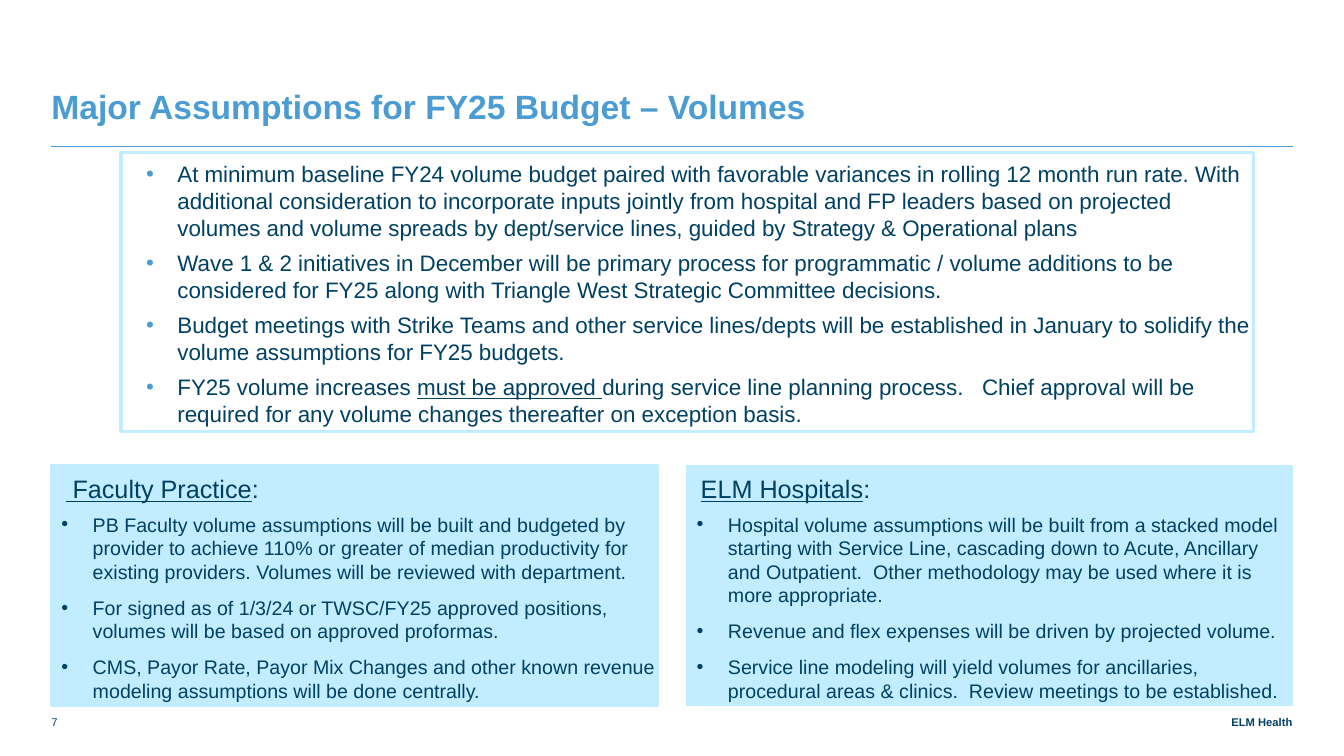
import pptx
import pptx.util
import pptx.dml.color
import pptx.enum.text
import pptx.enum.shapes
from lxml import etree

Inch, Pt = pptx.util.Inches, pptx.util.Pt
ALIGN, ANCHOR = pptx.enum.text.PP_ALIGN, pptx.enum.text.MSO_ANCHOR
NS = "http://schemas.openxmlformats.org/drawingml/2006/main"
COLORS = {"title": "4B9CD3", "text": "004163", "panel": "C2ECFF"}

# Grid: two columns inside equal margins
WIDE, HIGH = 13.33, 7.5
LEFT, GAP = 0.51, 0.29
SPAN = WIDE - 2 * LEFT
COL = (SPAN - GAP) / 2
FOOT = 7.0

# Each paragraph is a list of (text, underlined) pieces
POINTS = [
    [("At minimum baseline FY24 volume budget paired with favorable variances in "
      "rolling 12 month run rate. With additional consideration to incorporate inputs "
      "jointly from hospital and FP leaders based on projected volumes and volume "
      "spreads by dept/service lines, guided by Strategy & Operational plans", False)],
    [("Wave 1 & 2 initiatives in December will be primary process for programmatic / "
      "volume additions to be considered for FY25 along with Triangle West Strategic "
      "Committee decisions.", False)],
    [("Budget meetings with Strike Teams and other service lines/depts will be "
      "established in January to solidify the volume assumptions for FY25 budgets.",
      False)],
    [("FY25 volume increases ", False), ("must be approved ", True),
     ("during service line planning process.   Chief approval will be required for any "
      "volume changes thereafter on exception basis.", False)],
]
PANELS = [
    (" Faculty Practice", 2.25, [
        "PB Faculty volume assumptions will be built and budgeted by provider to achieve "
        "110% or greater of median productivity for existing providers. Volumes will be "
        "reviewed with department.",
        "For signed as of 1/3/24 or TWSC/FY25 approved positions, volumes will be based "
        "on approved proformas.",
        "CMS, Payor Rate, Payor Mix Changes and other known revenue modeling assumptions "
        "will be done centrally."]),
    ("ELM Hospitals", 0.75, [
        "Hospital volume assumptions will be built from a stacked model starting with "
        "Service Line, cascading down to Acute, Ancillary and Outpatient.  Other "
        "methodology may be used where it is more appropriate.",
        "Revenue and flex expenses will be driven by projected volume.",
        "Service line modeling will yield volumes for ancillaries, procedural areas & "
        "clinics.  Review meetings to be established."]),
]


def color(name):
    return pptx.dml.color.RGBColor.from_string(COLORS[name])


def set_font(par, size, name="text", bold=False):
    font = par.font
    font.name, font.size, font.bold = "Arial", Pt(size), bold
    font.color.rgb = color(name)


def set_frame(frame, anchor, insets=(0, 0, 0, 0)):
    frame.word_wrap = True
    frame.vertical_anchor = anchor
    (frame.margin_left, frame.margin_top,
     frame.margin_right, frame.margin_bottom) = map(Inch, insets)


def indent(par, left, first=0):
    props = par._p.get_or_add_pPr()
    props.set("marL", str(Inch(left)))
    props.set("indent", str(Inch(first)))
    return props


def add_bullet(par, left, tint):
    props = indent(par, left, -0.31)
    mark = etree.SubElement(props, f"{{{NS}}}buClr")
    etree.SubElement(mark, f"{{{NS}}}srgbClr", val=COLORS[tint])
    etree.SubElement(props, f"{{{NS}}}buFont", typeface="Arial")
    etree.SubElement(props, f"{{{NS}}}buChar", char="•")


def add_par(frame, pieces, size, after, left, tint=None):
    """Write one paragraph; a tint gives it a bullet of that colour."""
    first = frame.paragraphs[0]
    par = frame.add_paragraph() if first.runs else first
    par.alignment = ALIGN.LEFT
    par.line_spacing, par.space_after = 1.0, Pt(after)
    if tint:
        add_bullet(par, left, tint)
    else:
        indent(par, left)
    set_font(par, size)
    for text, under in pieces:
        run = par.add_run()
        run.text = text
        if under:
            run.font.underline = True


def add_box(slide, x, y, w, h, width, fill=None):
    box = slide.shapes.add_shape(pptx.enum.shapes.MSO_SHAPE.RECTANGLE,
                                 *map(Inch, (x, y, w, h)))
    box.shadow.inherit = False
    if fill:
        box.fill.solid()
        box.fill.fore_color.rgb = color(fill)
    else:
        box.fill.background()
    box.line.color.rgb = color("panel")
    box.line.width = Pt(width)
    set_frame(box.text_frame, ANCHOR.TOP, (0, 0.08, 0, 0))
    return box.text_frame


def add_rule(slide, y):
    rule = slide.shapes.add_connector(
        pptx.enum.shapes.MSO_CONNECTOR.STRAIGHT,
        *map(Inch, (LEFT, y, LEFT + SPAN, y)))
    rule.line.color.rgb = color("title")
    rule.line.width = Pt(0.5)
    etree.SubElement(rule._element.spPr, f"{{{NS}}}effectLst")


def add_foot(slide, text, x, w, align, bold=False):
    frame = slide.shapes.add_textbox(*map(Inch, (x, FOOT, w, 0.23))).text_frame
    set_frame(frame, ANCHOR.BOTTOM)
    par = frame.paragraphs[0]
    par.text, par.alignment = text, align
    set_font(par, 8, bold=bold)


def set_title(slide, text):
    title = slide.shapes.title
    title.left, title.top, title.width, title.height = map(
        Inch, (LEFT, 0.38, SPAN, 0.79))
    set_frame(title.text_frame, ANCHOR.BOTTOM, (0, 0.95, 2.12, 0))
    par = title.text_frame.paragraphs[0]
    par.text, par.alignment, par.line_spacing = text, ALIGN.LEFT, Pt(28)
    set_font(par, 24, "title", True)


def main():
    deck = pptx.Presentation()
    deck.slide_width, deck.slide_height = Inch(WIDE), Inch(HIGH)
    slide = deck.slides.add_slide(deck.slide_layouts[5])

    # Title and rule
    set_title(slide, "Major Assumptions for FY25 Budget – Volumes")
    add_rule(slide, 1.45)

    # Main points
    frame = add_box(slide, 1.2, 1.51, 11.23, 2.77, 2.25)
    for pieces in POINTS:
        add_par(frame, pieces, 16, 6, 0.56, "title")

    # Two panels
    for col, (head, width, items) in enumerate(PANELS):
        frame = add_box(slide, LEFT + col * (COL + GAP), 4.62, COL, FOOT - 4.62,
                        width, "panel")
        add_par(frame, [(head, True), (":", False)], 18, 6, 0.14)
        for item in items:
            add_par(frame, [(item, False)], 14, 9, 0.41, "text")

    # Footer
    add_foot(slide, "7", LEFT, 0.46, ALIGN.LEFT)
    add_foot(slide, "ELM Health", LEFT + SPAN - 1.64, 1.64, ALIGN.RIGHT, True)

    deck.save("out.pptx")


if __name__ == "__main__":
    main()
